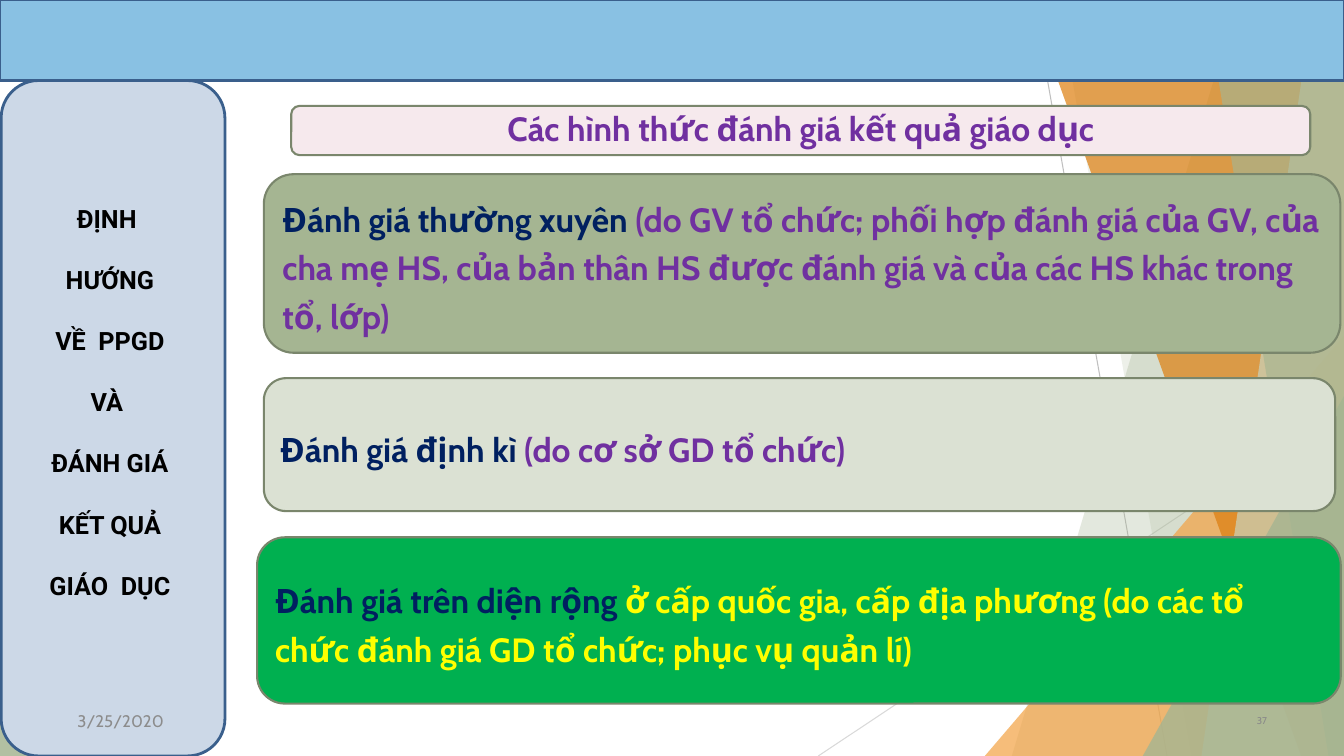
from lxml import etree
from pptx import Presentation
from pptx.dml.color import RGBColor
from pptx.enum.shapes import MSO_CONNECTOR, MSO_SHAPE
from pptx.enum.text import MSO_ANCHOR, PP_ALIGN
from pptx.oxml.ns import qn
from pptx.util import Cm, Pt

RECT = MSO_SHAPE.RECTANGLE
ROUND = MSO_SHAPE.ROUNDED_RECTANGLE
TRIANGLE = MSO_SHAPE.ISOSCELES_TRIANGLE
STRAIGHT = MSO_CONNECTOR.STRAIGHT
MIDDLE = MSO_ANCHOR.MIDDLE
LEFT, CENTER, RIGHT = PP_ALIGN.LEFT, PP_ALIGN.CENTER, PP_ALIGN.RIGHT

W, H = 33.87, 19.05
COLORS = {
    "sage": "A5B592", "pale_sage": "C9D3BE", "light_sage": "DBE1D3",
    "orange": "F3A447", "dark_orange": "DD7E0E", "sky": "89C1E3",
    "side": "CCD8E7", "blue_edge": "3A5F8C", "sage_edge": "7A866C",
    "pink": "F6E9ED", "green": "00B050", "navy": "002060",
    "purple": "7030A0", "yellow": "FFFF00", "black": "000000",
    "date": "8C8C8C", "number": "898989",
    "line": "BFBFBF", "pale_line": "D9D9D9",
}


def rgb(name):
    return RGBColor.from_string(COLORS[name])


def write(p, text, color="purple", size=24, font="Cabin", bold=True):
    r = p.add_run()
    r.text = text
    r.font.name = font
    r.font.size = Pt(size)
    r.font.bold = bold
    r.font.color.rgb = rgb(color)


class Deck:
    def __init__(self):
        self.prs = Presentation()
        self.prs.slide_width, self.prs.slide_height = Cm(W), Cm(H)
        self.s = self.prs.slides.add_slide(self.prs.slide_layouts[6])

    def paint(self, sp, fill, alpha=100, edge=None, width=1.5):
        sp.shadow.inherit = False
        sp.fill.solid()
        sp.fill.fore_color.rgb = rgb(fill)
        if alpha < 100:
            clr = sp._element.spPr.find(qn("a:solidFill"))[0]
            etree.SubElement(clr, qn("a:alpha")).set("val", str(alpha * 1000))
        if edge:
            sp.line.color.rgb = rgb(edge)
            sp.line.width = Pt(width)
        else:
            sp.line.fill.background()
        return sp

    def line(self, x1, y1, x2, y2, color):
        c = self.s.shapes.add_connector(STRAIGHT, Cm(x1), Cm(y1), Cm(x2), Cm(y2))
        c.line.color.rgb = rgb(color)
        c.line.width = Pt(0.75)
        etree.SubElement(c._element.spPr, qn("a:effectLst"))

    def panel(self, top_x, bottom_x, fill, alpha):
        fb = self.s.shapes.build_freeform(Cm(top_x), 0)
        corners = [(W, 0), (W, H), (bottom_x, H)]
        fb.add_line_segments([(Cm(x), Cm(y)) for x, y in corners], close=True)
        self.paint(fb.convert_to_shape(), fill, alpha)

    def shape(self, kind, x, y, w, h, fill, **style):
        sp = self.s.shapes.add_shape(kind, Cm(x), Cm(y), Cm(w), Cm(h))
        return self.paint(sp, fill, **style)

    def triangle(self, x, y, w, fill, alpha, apex):
        sp = self.shape(TRIANGLE, x, y, w, H - y, fill, alpha=alpha)
        sp.adjustments[0] = apex

    def box(self, x, y, w, h, fill, runs, align=LEFT, spacing=1.2, before=0):
        sp = self.shape(ROUND, x, y, w, h, fill, edge="sage_edge")
        tf = sp.text_frame
        tf.word_wrap = True
        tf.vertical_anchor = MIDDLE
        p = tf.paragraphs[0]
        p.alignment, p.line_spacing, p.space_before = align, spacing, Pt(before)
        for text, color in runs:
            write(p, text, color)

    def sidebar(self, lines):
        sp = self.shape(ROUND, 0.03, 2.03, 5.64, H - 2.03, "side",
                        edge="blue_edge", width=2)
        tf = sp.text_frame
        tf.word_wrap = True
        tf.vertical_anchor = MIDDLE
        tf.margin_left = tf.margin_right = 0
        tf.margin_bottom = Cm(0.95)
        for i, text in enumerate(lines):
            p = tf.add_paragraph() if i else tf.paragraphs[0]
            p.alignment = CENTER
            p.space_before = Pt(22 if i else 0)
            write(p, text, "black", 18, "Roboto")

    def footer(self, x, text, color, size, align):
        sp = self.s.shapes.add_textbox(Cm(x), Cm(17.65), Cm(7.9), Cm(1.02))
        tf = sp.text_frame
        tf.word_wrap = True
        tf.vertical_anchor = MIDDLE
        tf.paragraphs[0].alignment = align
        write(tf.paragraphs[0], text, color, size, bold=False)


def main():
    d = Deck()
    d.line(26.04, 0, 29.41, H, "line")
    d.line(W, 10.24, 20.62, H, "pale_line")
    d.panel(31.19, 25.5, "sage", 30)
    d.panel(26.67, 30.02, "sage", 20)
    d.triangle(24.82, 8.46, 9.05, "orange", 72, apex=1)
    d.panel(25.93, 32.79, "dark_orange", 70)
    d.panel(33.1, 30.28, "pale_sage", 70)
    d.panel(30.38, 33.48, "sage", 65)
    d.triangle(28.8, 9.98, 5.07, "sage", 80, apex=1)
    d.triangle(0, 11.15, 1.24, "sage", 85, apex=0)

    d.shape(RECT, 0, 0, W, 2.03, "sky", edge="blue_edge", width=2)
    d.sidebar(["ĐỊNH  ", "HƯỚNG ", "VỀ  PPGD ", "VÀ  ", "ĐÁNH GIÁ ",
               "KẾT QUẢ ", "GIÁO  DỤC "])

    d.box(6.65, 4.39, 27.13, 4.5, "sage", [
        ("Đánh giá thường xuyên ", "navy"),
        ("(do GV tổ chức; phối hợp đánh giá của GV, của cha mẹ HS, của bản "
         "thân HS được đánh giá và của các HS khác trong tổ, lớp)", "purple")])
    d.box(7.34, 2.67, 25.68, 1.24, "pink",
          [("Các hình thức đánh giá kết quả giáo dục", "purple")],
          align=CENTER, spacing=0.9, before=10)
    d.box(6.48, 13.54, 27.31, 4.19, "green", [
        ("Đánh giá trên diện rộng ", "navy"),
        ("ở cấp quốc gia, cấp địa phương (do các tổ chức đánh giá GD tổ chức; "
         "phục vụ quản lí)", "yellow")])
    d.box(6.65, 9.53, 27, 3.35, "light_sage", [
        ("Đánh giá định kì ", "navy"),
        ("(do cơ sở GD tổ chức)", "purple")])

    d.footer(1.7, "3/25/2020", "date", 12, LEFT)
    d.footer(24.28, "37", "number", 7, RIGHT)
    d.prs.save("out.pptx")


if __name__ == "__main__":
    main()
